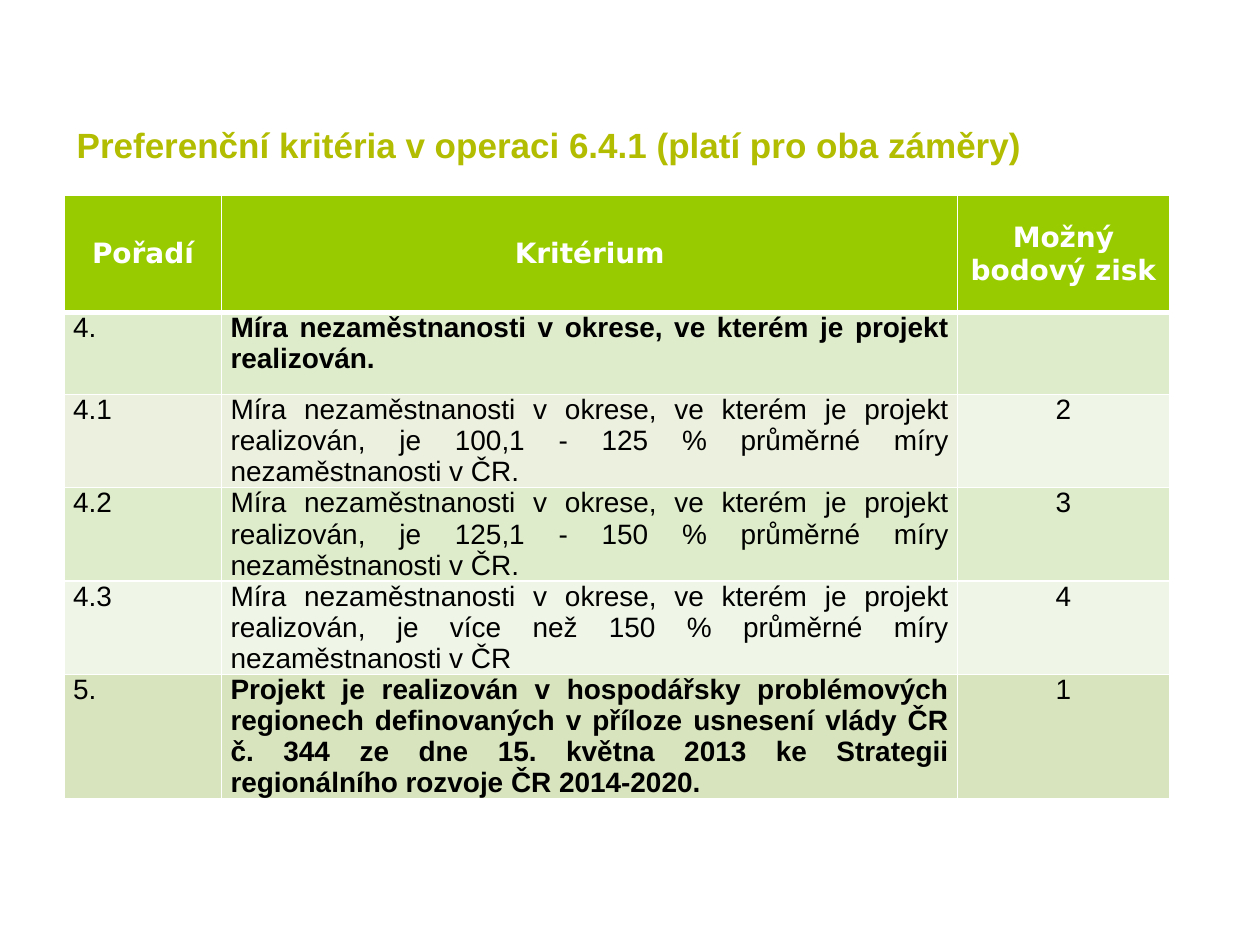
import pptx
import pptx.dml.color
import pptx.enum.text
import pptx.oxml
import pptx.oxml.ns
import pptx.util
from dataclasses import dataclass

Inches = pptx.util.Inches
Pt = pptx.util.Pt
ALIGN = pptx.enum.text.PP_ALIGN
ANCHOR = pptx.enum.text.MSO_ANCHOR


@dataclass(frozen=True)
class Theme:
    title: str = "B2BC00"
    header: str = "99CC00"
    white: str = "FFFFFF"
    black: str = "000000"
    band: str = "DEECCB"
    pale: str = "EFF6E7"
    olive: str = "EBF1DE"
    deep: str = "D7E4BD"
    font: str = "Arial"
    header_font: str = "DejaVu Sans"
    title_size: float = 20
    table_size: float = 16
    thin: float = 0.91
    thick: float = 2.95


THEME = Theme()
TITLE = "Preferenční kritéria v operaci 6.4.1 (platí pro oba záměry)"
HEADERS = ("Pořadí", "Kritérium", "Možný bodový zisk")
RATE = "Míra nezaměstnanosti v okrese, ve kterém je projekt realizován, je "
CRITERIA = [
    ("4.", "Míra nezaměstnanosti v okrese, ve kterém je projekt realizován.", ""),
    ("4.1", RATE + "100,1 - 125 % průměrné míry nezaměstnanosti v ČR.", "2"),
    ("4.2", RATE + "125,1 - 150 % průměrné míry nezaměstnanosti v ČR.", "3"),
    ("4.3", RATE + "více než 150 % průměrné míry nezaměstnanosti v ČR", "4"),
    ("5.", "Projekt je realizován v hospodářsky problémových regionech definovaných "
     "v příloze usnesení vlády ČR č. 344 ze dne 15. května 2013 ke Strategii "
     "regionálního rozvoje ČR 2014-2020.", "1"),
]
FILLS = [
    (THEME.band,) * 3,
    (THEME.olive, THEME.olive, THEME.pale),
    (THEME.band,) * 3,
    (THEME.pale,) * 3,
    (THEME.deep,) * 3,
]
COLUMN_WIDTHS = (1.25, 5.84, 1.68)
ROW_HEIGHTS = (0.93, 0.65, 0.74, 0.74, 0.74, 0.99)
COLUMN_ALIGN = (ALIGN.LEFT, ALIGN.JUSTIFY, ALIGN.CENTER)


def rgb(value):
    return pptx.dml.color.RGBColor.from_string(value)


def add_span(para, text, size, color, name, bold):
    span = para.add_run()
    span.text = text
    span.font.size = Pt(size)
    span.font.name = name
    span.font.bold = bold
    span.font.color.rgb = rgb(color)


def set_borders(cell, top, bottom):
    widths = {"L": THEME.thin, "R": THEME.thin, "T": top, "B": bottom}
    for side, width in widths.items():
        cell._tc.get_or_add_tcPr().append(pptx.oxml.parse_xml(
            f'<a:ln{side} {pptx.oxml.ns.nsdecls("a")} w="{Pt(width)}"><a:solidFill>'
            f'<a:srgbClr val="{THEME.white}"/></a:solidFill></a:ln{side}>'))


def style_cell(cell, fill, row, side_inset, end_inset):
    set_borders(cell, THEME.thick if row == 1 else THEME.thin,
                THEME.thick if row == 0 else THEME.thin)
    cell.fill.solid()
    cell.fill.fore_color.rgb = rgb(fill)
    cell.margin_left = cell.margin_right = Inches(side_inset)
    cell.margin_top = cell.margin_bottom = Inches(end_inset)


def add_title(page):
    box = page.shapes.add_textbox(Inches(0.51), Inches(0.52), Inches(8.82), Inches(0.84))
    box.text_frame.word_wrap = True
    box.text_frame.vertical_anchor = ANCHOR.BOTTOM
    add_span(box.text_frame.paragraphs[0], TITLE, THEME.title_size, THEME.title,
             THEME.font, True)


def add_criteria(page):
    table = page.shapes.add_table(
        len(ROW_HEIGHTS), len(COLUMN_WIDTHS), Inches(0.51), Inches(1.55),
        Inches(sum(COLUMN_WIDTHS)), Inches(sum(ROW_HEIGHTS))).table
    table.horz_banding = False
    for column, width in zip(table.columns, COLUMN_WIDTHS):
        column.width = Inches(width)
    for row, height in zip(table.rows, ROW_HEIGHTS):
        row.height = Inches(height)

    for column, text in enumerate(HEADERS):
        cell = table.cell(0, column)
        style_cell(cell, THEME.header, 0, 0.1, 0.05)
        cell.vertical_anchor = ANCHOR.MIDDLE
        para = cell.text_frame.paragraphs[0]
        para.alignment = ALIGN.CENTER
        para.line_spacing = 1.01
        add_span(para, text, THEME.table_size, THEME.white, THEME.header_font, True)

    for row, (texts, fills) in enumerate(zip(CRITERIA, FILLS), 1):
        main_criterion = texts[0].endswith(".")
        for column, (text, fill) in enumerate(zip(texts, fills)):
            cell = table.cell(row, column)
            style_cell(cell, fill, row, 0.07, 0)
            is_criterion = column == 1
            if is_criterion and not main_criterion:
                cell.vertical_anchor = ANCHOR.MIDDLE
            para = cell.text_frame.paragraphs[0]
            para.alignment = COLUMN_ALIGN[column]
            if text:
                add_span(para, text, THEME.table_size, THEME.black, THEME.font,
                         is_criterion and main_criterion)


def main():
    """Build the slide of preference criteria and save it."""
    deck = pptx.Presentation()
    deck.slide_width, deck.slide_height = Inches(10), Inches(7.5)
    page = deck.slides.add_slide(deck.slide_layouts[6])
    add_criteria(page)
    add_title(page)
    deck.save("out.pptx")


if __name__ == "__main__":
    main()
